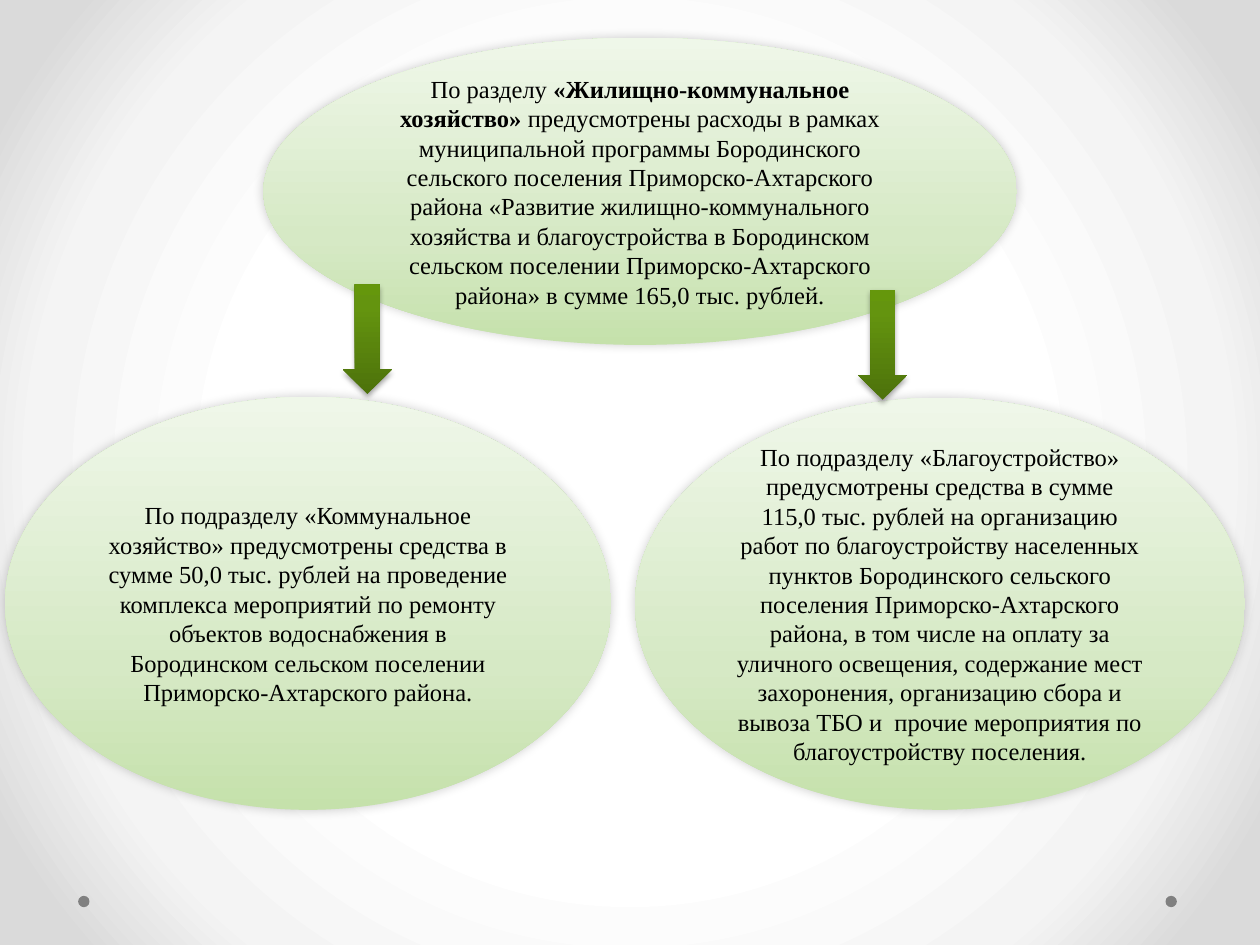
from pptx import Presentation
from pptx.dml.color import RGBColor
from pptx.enum.shapes import MSO_SHAPE
from pptx.enum.text import MSO_ANCHOR, PP_ALIGN
from pptx.oxml import parse_xml
from pptx.oxml.ns import nsdecls, qn
from pptx.util import Inches, Pt

WIDTH, HEIGHT = Inches(10), Inches(7.5)
LINEAR = '<a:lin ang="16200000" scaled="0"/>'
RADIAL = ('<a:path path="circle"><a:fillToRect l="50000" t="50000" '
          'r="50000" b="50000"/></a:path>')


def color(value):
    return RGBColor.from_string(value)


class Deck:
    font, size, text_color = "Times New Roman", Pt(14), "000000"
    oval_stops = [(0, "C5E1AB"), (35, "D6E9C5"), (100, "EFF7E9")]
    arrow_stops = [(0, "4D720B"), (80, "64940F"), (100, "65970C")]
    back_stops = [(50, "FFFFFF"), (76, "F4F4F4"), (92, "DADADA")]

    def __init__(self):
        self.prs = Presentation()
        self.prs.slide_width, self.prs.slide_height = WIDTH, HEIGHT
        self.s = self.prs.slides.add_slide(self.prs.slide_layouts[6])

    def gradient(self, fill, parent, stops, direction=LINEAR):
        fill.solid()
        stop_xml = "".join(
            f'<a:gs pos="{pos * 1000}"><a:srgbClr val="{color(value)}"/></a:gs>'
            for pos, value in stops)
        parent.replace(parent.find(qn("a:solidFill")), parse_xml(
            f'<a:gradFill {nsdecls("a")} rotWithShape="1">'
            f'<a:gsLst>{stop_xml}</a:gsLst>{direction}</a:gradFill>'))

    def background(self):
        fill = self.s.background.fill
        fill.solid()
        parent = self.s.element.find(".//" + qn("p:bgPr"))
        self.gradient(fill, parent, self.back_stops, RADIAL)

    def shape(self, kind, left, top, width, height):
        sp = self.s.shapes.add_shape(
            kind, int(left * WIDTH), int(top * HEIGHT),
            int(width * WIDTH), int(height * HEIGHT))
        sp.line.fill.background()
        sp.shadow.inherit = False
        return sp

    def shadow(self, sp, alpha, blur, dist, angle):
        sp.element.spPr.find(qn("a:effectLst")).append(parse_xml(
            f'<a:outerShdw {nsdecls("a")} blurRad="{Pt(blur)}" '
            f'dist="{Pt(dist)}" dir="{angle * 60000}" rotWithShape="0">'
            f'<a:srgbClr val="000000"><a:alpha val="{alpha * 1000}"/>'
            '</a:srgbClr></a:outerShdw>'))

    def dot(self, left):
        sp = self.shape(MSO_SHAPE.OVAL, left, 0.948, 0.009, 0.012)
        sp.fill.solid()
        sp.fill.fore_color.rgb = color("808080")

    def oval(self, box, runs):
        sp = self.shape(MSO_SHAPE.OVAL, *box)
        self.gradient(sp.fill, sp.element.spPr, self.oval_stops)
        self.shadow(sp, 20, 6, 0, 225)
        tf = sp.text_frame
        tf.word_wrap = True
        tf.vertical_anchor = MSO_ANCHOR.MIDDLE
        p = tf.paragraphs[0]
        p.alignment = PP_ALIGN.CENTER
        for text, bold in runs:
            r = p.add_run()
            r.text = text
            r.font.name, r.font.size, r.font.bold = self.font, self.size, bold
            r.font.color.rgb = color(self.text_color)

    def arrow(self, left, top):
        sp = self.shape(MSO_SHAPE.DOWN_ARROW, left, top, 0.039, 0.116)
        self.gradient(sp.fill, sp.element.spPr, self.arrow_stops)
        self.shadow(sp, 35, 3.1, 1.8, 90)


def main():
    deck = Deck()
    deck.background()
    for left in (0.925, 0.062):
        deck.dot(left)
    deck.oval((0.209, 0.04, 0.598, 0.325), [
        ("По разделу ", False),
        ("«Жилищно-коммунальное хозяйство» ", True),
        ("предусмотрены расходы в рамках муниципальной программы "
         "Бородинского сельского поселения Приморско-Ахтарского района "
         "«Развитие жилищно-коммунального хозяйства и благоустройства в "
         "Бородинском сельском поселении Приморско-Ахтарского района» "
         "в сумме 165,0 тыс. рублей.", False)])
    deck.oval((0.004, 0.42, 0.481, 0.437), [
        ("По подразделу «Коммунальное хозяйство» предусмотрены средства в "
         "сумме 50,0 тыс. рублей на проведение комплекса мероприятий по "
         "ремонту объектов водоснабжения в Бородинском сельском поселении "
         "Приморско-Ахтарского района.", False)])
    deck.oval((0.504, 0.421, 0.484, 0.436), [
        ("По подразделу «Благоустройство» предусмотрены средства в сумме "
         "115,0 тыс. рублей на организацию работ по благоустройству "
         "населенных пунктов Бородинского сельского поселения "
         "Приморско-Ахтарского района, в том числе на оплату за уличного "
         "освещения, содержание мест захоронения, организацию сбора и "
         "вывоза ТБО и  прочие мероприятия по благоустройству поселения.",
         False)])
    for left, top in ((0.272, 0.301), (0.681, 0.307)):
        deck.arrow(left, top)
    deck.prs.save("out.pptx")


if __name__ == "__main__":
    main()
